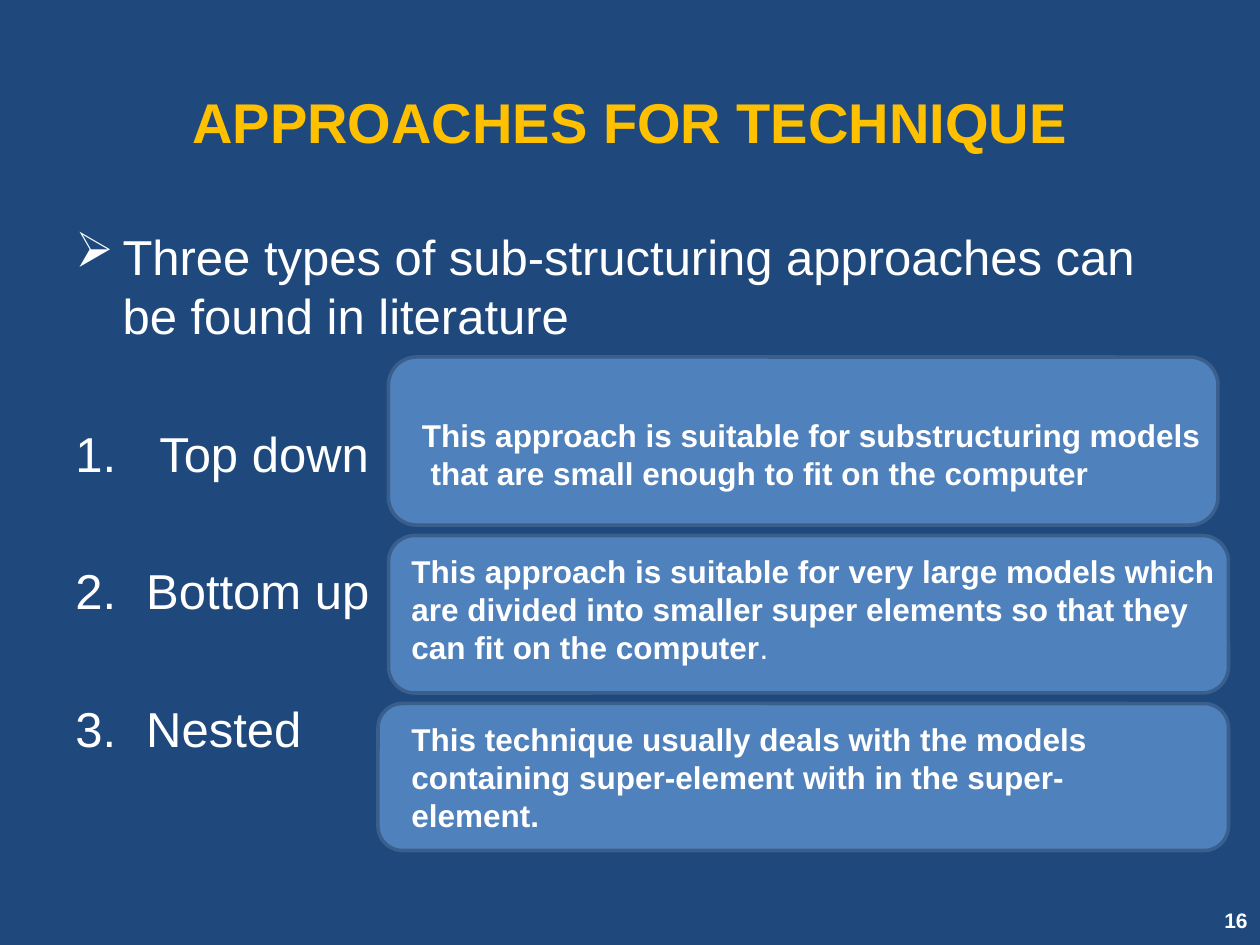
from dataclasses import dataclass

from lxml import etree
from pptx import Presentation
from pptx.dml.color import RGBColor
from pptx.enum import shapes, text
from pptx.oxml import ns
from pptx.util import Pt

NAVY, BLUE, EDGE, GOLD, WHITE = "1F497D", "4F81BD", "3A5F8C", "FFC000", "FFFFFF"
BODY = {"name": "Arial", "size": Pt(28), "bold": False}
NOTE = {"name": "Arial", "size": Pt(18), "bold": True}
TITLE = {"name": "Arial", "size": Pt(32), "bold": True}
NUMBER = {"name": "Arial", "size": Pt(12), "bold": True}


@dataclass
class Area:
    left: float
    top: float
    width: float
    height: float

    def lengths(self):
        return [Pt(v) for v in (self.left, self.top, self.width, self.height)]


@dataclass
class Line:
    words: str
    indent: float = 0
    hanging: float = 0
    before: float = 0
    bullet: str = ""
    bullet_value: str = ""
    ending: str = ""  # closing characters set in regular weight


@dataclass
class Approach:
    panel: Area
    caption: Area
    lines: list[Line]


APPROACHES = [
    Approach(Area(222, 204, 474, 96), Area(234, 234, 534, 51), [
        Line("This approach is suitable for substructuring models"),
        Line("that are small enough to fit on the computer", indent=5),
    ]),
    Approach(Area(222, 306, 480, 90), Area(228, 312, 492, 94), [
        Line("This approach is suitable for very large models which are divided "
             "into smaller super elements so that they can fit on the computer", ending="."),
    ]),
    Approach(Area(216, 402, 486, 84), Area(228, 408, 456, 94), [
        Line("This technique usually deals with the models containing "
             "super-element with in the super-element."),
    ]),
]
OUTLINE = [
    Line("Three types of sub-structuring approaches can be found in literature",
         27, 27, 0, "buChar", "➢"),
    Line("Top down", 48, 48, 45, "buAutoNum", "arabicPeriod"),
    Line("Bottom up", 40.5, 40.5, 45, "buAutoNum", "arabicPeriod"),
    Line("Nested", 40.5, 40.5, 45, "buAutoNum", "arabicPeriod"),
]


def rgb(value: str) -> RGBColor:
    return RGBColor.from_string(value)


def apply_font(font, style: dict, color: str) -> None:
    for key, value in style.items():
        setattr(font, key, value)
    font.color.rgb = rgb(color)


def format_paragraph(paragraph, line: Line) -> None:
    """Set the indents, spacing and bullet of one paragraph."""
    properties = paragraph._p.get_or_add_pPr()
    properties.set("marL", str(Pt(line.indent)))
    properties.set("indent", str(-Pt(line.hanging)))
    if line.before:
        paragraph.space_before = Pt(line.before)
    if line.bullet:
        bullet = etree.SubElement(properties, ns.qn("a:" + line.bullet))
        bullet.set("char" if line.bullet == "buChar" else "type", line.bullet_value)


def add_text(slide, area: Area, lines: list[Line], style: dict, color: str = WHITE,
             align=text.PP_ALIGN.LEFT, anchor=text.MSO_ANCHOR.TOP) -> None:
    frame = slide.shapes.add_textbox(*area.lengths()).text_frame
    frame.word_wrap = True
    frame.vertical_anchor = anchor
    for index, line in enumerate(lines):
        paragraph = frame.add_paragraph() if index else frame.paragraphs[0]
        format_paragraph(paragraph, line)
        paragraph.alignment = align
        for words, changes in ((line.words, {}), (line.ending, {"bold": False})):
            if words:
                run = paragraph.add_run()
                run.text = words
                apply_font(run.font, style | changes, color)


def add_panel(slide, area: Area) -> None:
    panel = slide.shapes.add_shape(shapes.MSO_SHAPE.ROUNDED_RECTANGLE, *area.lengths())
    panel.shadow.inherit = False
    panel.fill.solid()
    panel.fill.fore_color.rgb = rgb(BLUE)
    panel.line.color.rgb = rgb(EDGE)
    panel.line.width = Pt(2)


def main() -> None:
    deck = Presentation()
    deck.slide_width, deck.slide_height = Pt(720), Pt(540)
    slide = deck.slides.add_slide(deck.slide_layouts[6])
    slide.background.fill.solid()
    slide.background.fill.fore_color.rgb = rgb(NAVY)

    add_text(slide, Area(36, 24, 648, 90), [Line("APPROACHES FOR TECHNIQUE")], TITLE,
             GOLD, text.PP_ALIGN.CENTER, text.MSO_ANCHOR.MIDDLE)
    add_text(slide, Area(36, 126, 648, 356), OUTLINE, BODY)
    add_text(slide, Area(672, 511, 48, 29), [Line("16")], NUMBER,
             align=text.PP_ALIGN.RIGHT, anchor=text.MSO_ANCHOR.MIDDLE)
    for approach in APPROACHES:
        add_panel(slide, approach.panel)
        add_text(slide, approach.caption, approach.lines, NOTE)
    deck.save("out.pptx")


if __name__ == "__main__":
    main()
